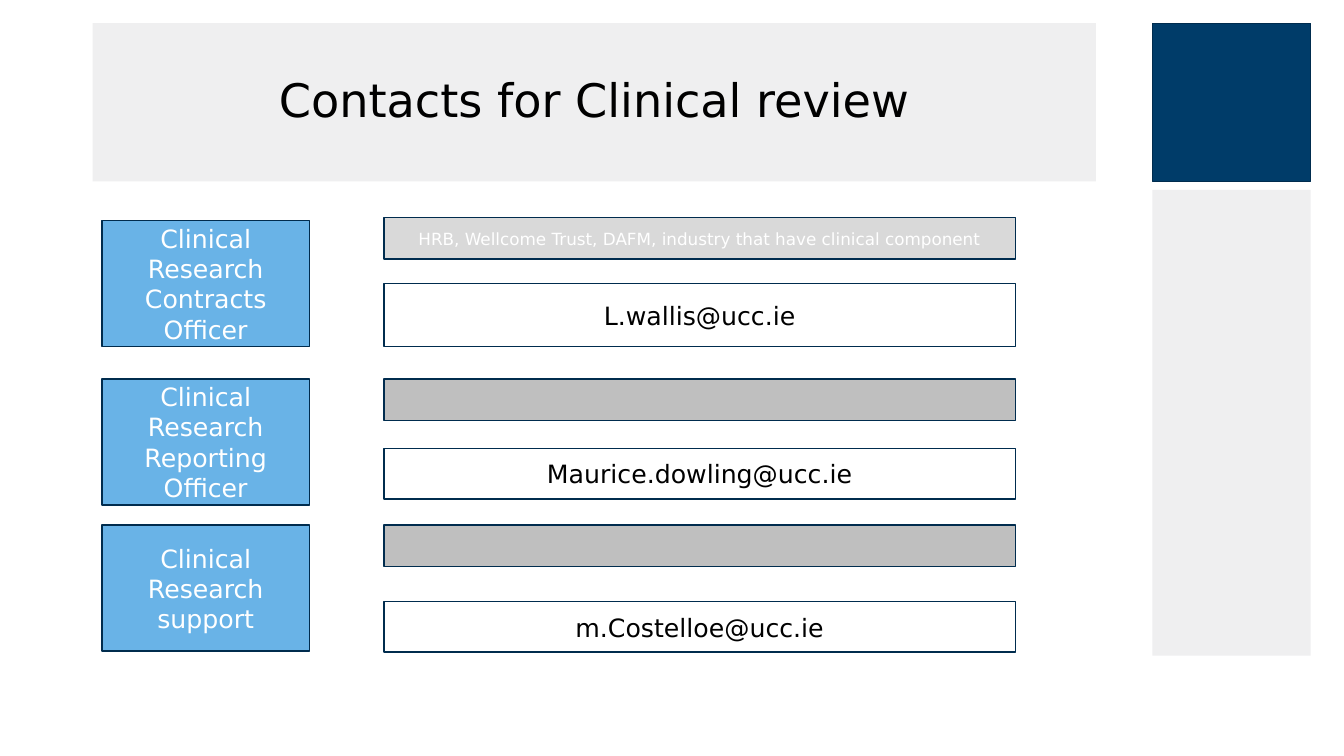
from pptx import Presentation
from pptx.dml.color import RGBColor
from pptx.enum.shapes import MSO_SHAPE
from pptx.enum.text import MSO_ANCHOR, PP_ALIGN
from pptx.util import Inches, Pt

COLORS = {
    "panel": "EFEFF0",
    "navy": "003C69",
    "outline": "002C4E",
    "role": "69B3E7",
    "funders": "D9D9D9",
    "band": "BFBFBF",
    "white": "FFFFFF",
    "black": "000000",
}
FONT = "DejaVu Sans"

deck = Presentation()
deck.slide_width = Inches(13.33)
deck.slide_height = Inches(7.5)
slide = deck.slides.add_slide(deck.slide_layouts[6])


def color(name):
    return RGBColor.from_string(COLORS[name])


def add_box(left, top, width, height, fill, outlined=True, text="", size=18, ink="black", spacing=None):
    across, down = deck.slide_width / 100, deck.slide_height / 100
    box = slide.shapes.add_shape(
        MSO_SHAPE.RECTANGLE,
        int(left * across), int(top * down), int(width * across), int(height * down),
    )
    box.shadow.inherit = False
    box.fill.solid()
    box.fill.fore_color.rgb = color(fill)
    if outlined:
        box.line.color.rgb = color("outline")
        box.line.width = Pt(1)
    else:
        box.line.fill.background()
    if text:
        box.text_frame.word_wrap = True
        box.text_frame.vertical_anchor = MSO_ANCHOR.MIDDLE
        paragraph = box.text_frame.paragraphs[0]
        paragraph.alignment = PP_ALIGN.CENTER
        if spacing:
            paragraph.line_spacing = spacing
        run = paragraph.add_run()
        run.text = text
        run.font.name = FONT
        run.font.size = Pt(size)
        run.font.color.rgb = color(ink)


header_top, header_height = 3.07, 20.93
side_left, side_width = 85.75, 11.78
add_box(side_left, 25.13, side_width, 61.6, "panel", outlined=False)
add_box(side_left, header_top, side_width, header_height, "navy")
add_box(6.9, header_top, 74.64, header_height, "panel", outlined=False,
        text="Contacts for Clinical review", size=33, spacing=0.9)

role_left, role_width, role_height = 7.58, 15.45, 16.67
detail_left, detail_width, band_height = 28.58, 46.96, 5.47
funders = "HRB, Wellcome Trust, DAFM, industry that have clinical component"

contacts = [
    ("Clinical Research Contracts Officer", 29.2, funders, "funders", 28.8, "L.wallis@ucc.ie", 37.47, 8.4),
    ("Clinical Research Reporting Officer", 50.13, "", "band", 50.13, "Maurice.dowling@ucc.ie", 59.33, 6.67),
    ("Clinical Research support", 69.47, "", "band", 69.47, "m.Costelloe@ucc.ie", 79.6, 6.67),
]
for role, role_top, scope, scope_fill, scope_top, email, email_top, email_height in contacts:
    add_box(role_left, role_top, role_width, role_height, "role", text=role, ink="white")
    add_box(detail_left, scope_top, detail_width, band_height, scope_fill, text=scope, size=12, ink="white")
    add_box(detail_left, email_top, detail_width, email_height, "white", text=email)

deck.save("out.pptx")
